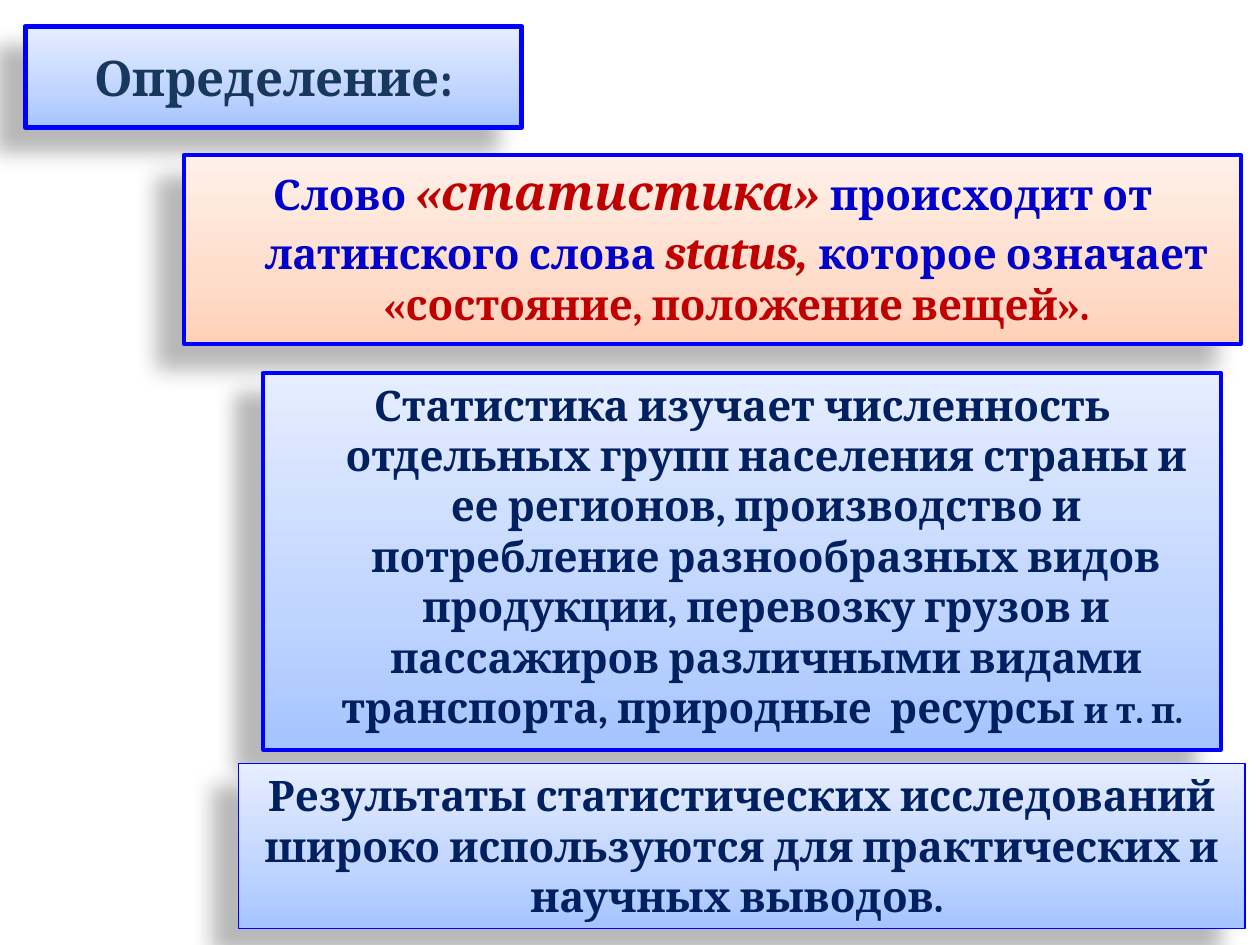
"""Build a slide that defines the word statistics."""
from pptx import Presentation
from pptx.dml.color import RGBColor
from pptx.enum.shapes import MSO_SHAPE
from pptx.enum.text import MSO_ANCHOR, MSO_AUTO_SIZE, PP_ALIGN
from pptx.oxml import parse_xml
from pptx.oxml.ns import nsdecls
from pptx.util import Inches, Pt

COLORS = {"line": "0000FF", "title": "17375E", "blue": "0000CC",
          "red": "C00000", "navy": "002060", "shadow": "000000"}
GRADIENTS = {"cool": ("A4C4FF", "BFD4FF", "E6EEFF"),
             "warm": ("FFD0B8", "FFDDCB", "FFF0E9")}


def add_xml(parent, tag, attrs="", inner=""):
    parent.append(parse_xml(f"<a:{tag} {nsdecls('a')} {attrs}>{inner}</a:{tag}>"))


def style_panel(sp, geometry, adjust, gradient, width):
    pr = sp._element.spPr
    for old in pr.xpath("a:prstGeom"):
        pr.remove(old)
    add_xml(pr, "prstGeom", f'prst="{geometry}"', f"<a:avLst>{adjust}</a:avLst>")
    stops = "".join(f'<a:gs pos="{pos}"><a:srgbClr val="{color}"/></a:gs>'
                    for pos, color in zip((0, 35000, 100000), GRADIENTS[gradient]))
    add_xml(pr, "gradFill", 'rotWithShape="1"',
            f'<a:gsLst>{stops}</a:gsLst><a:lin ang="16200000" scaled="1"/>')
    sp.line.color.rgb = RGBColor.from_string(COLORS["line"])
    sp.line.width = Pt(width)
    add_xml(pr, "effectLst", "",
            f'<a:outerShdw blurRad="{Pt(11.8)}" dist="{Pt(19.7)}" dir="8460000" '
            f'algn="ctr" rotWithShape="0"><a:srgbClr val="{COLORS["shadow"]}">'
            '<a:alpha val="28000"/></a:srgbClr></a:outerShdw>')


prs = Presentation()
prs.slide_width, prs.slide_height = Inches(10), Inches(7.5)
s = prs.slides.add_slide(prs.slide_layouts[1])
title, body = s.shapes.title, s.placeholders[1]
study, results = [s.shapes.add_shape(MSO_SHAPE.RECTANGLE, 0, 0, 0, 0) for _ in range(2)]

HALF_ROUND = '<a:gd name="adj" fmla="val 50000"/>'
panels = [
    (title, (0.2, 0.21, 3.94, 0.8), "roundRect", HALF_ROUND, "cool", 3, 0, MSO_ANCHOR.MIDDLE,
     [("Определение:", 28, "title", False)]),
    (body, (1.46, 1.23, 8.39, 1.5), "rect", "", "warm", 2.25, 0.38, MSO_ANCHOR.TOP,
     [("Слово ", 24, "blue", False),
      ("«статистика» ", 28, "red", True),
      ("происходит от латинского слова ", 24, "blue", False),
      ("status, ", 28, "red", True),
      ("которое означает ", 24, "blue", False),
      ("«состояние, положение вещей».", 24, "red", False)]),
    (study, (2.09, 2.96, 7.6, 2.99), "rect", "", "cool", 2.25, 0.38, MSO_ANCHOR.TOP,
     [("Статистика изучает численность отдельных групп населения страны и ее "
       "регионов, производство и потребление разнообразных видов продукции, "
       "перевозку грузов и пассажиров различными видами транспорта, "
       "природные  ресурсы ", 24, "navy", False),
      ("и т. п. ", 20, "navy", False)]),
    (results, (1.89, 6.06, 7.99, 1.31), "rect", "", "cool", 0.75, 0, MSO_ANCHOR.TOP,
     [("Результаты статистических исследований широко используются для "
       "практических и научных выводов. ", 24, "navy", False)]),
]

for sp, box, geometry, adjust, gradient, width, indent, anchor, runs in panels:
    sp.left, sp.top, sp.width, sp.height = map(Inches, box)
    style_panel(sp, geometry, adjust, gradient, width)
    tf = sp.text_frame
    frame = {"word_wrap": True, "auto_size": MSO_AUTO_SIZE.NONE, "vertical_anchor": anchor}
    for name, value in frame.items():
        setattr(tf, name, value)
    p = tf.paragraphs[0]
    p.alignment, p.space_before = PP_ALIGN.CENTER, Pt(0)
    pPr = p._p.get_or_add_pPr()
    pPr.set("marL", str(Inches(indent)))
    pPr.set("indent", str(-Inches(indent)))
    add_xml(pPr, "buNone")
    for text, size, color, italic in runs:
        r = p.add_run()
        r.text = text
        r.font.color.rgb = RGBColor.from_string(COLORS[color])
        font = {"name": "Cambria", "size": Pt(size), "bold": True, "italic": italic}
        for name, value in font.items():
            setattr(r.font, name, value)

prs.save("out.pptx")
